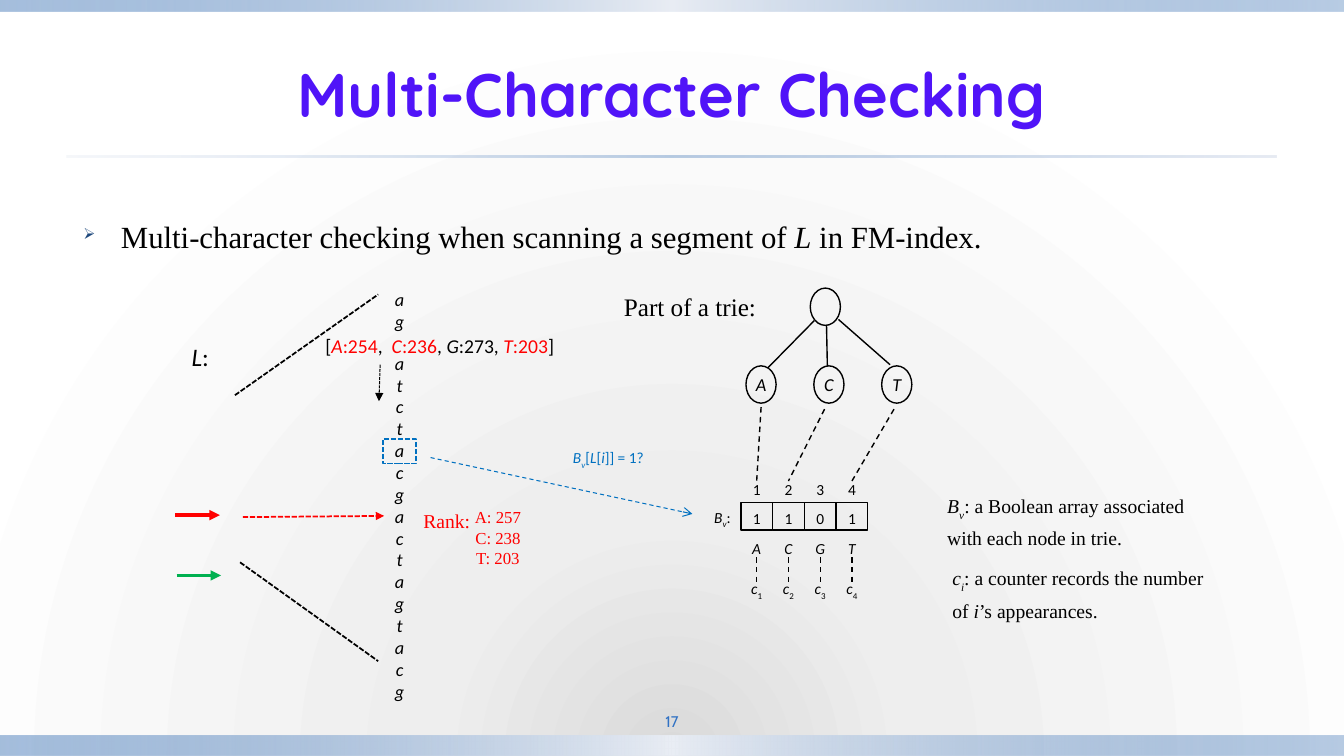
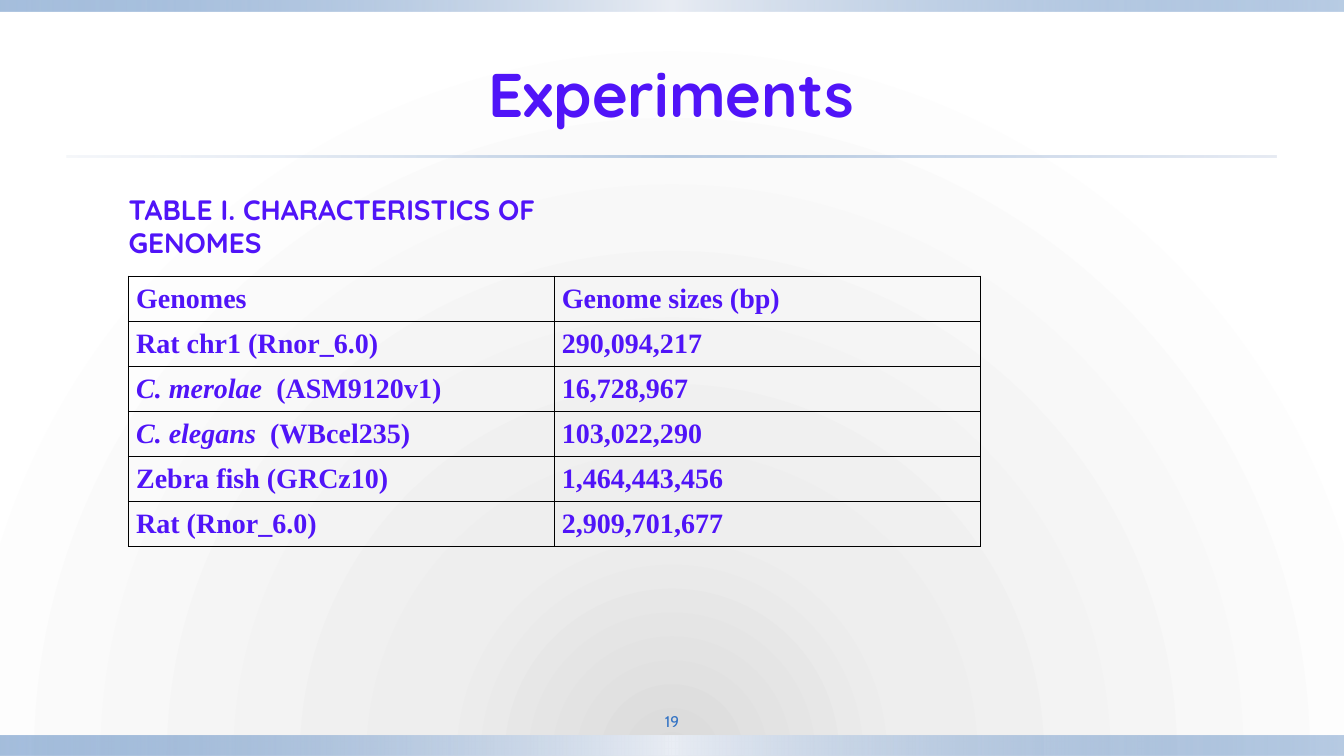
import dataclasses

import lxml.etree
import pptx
import pptx.dml.color
import pptx.enum.dml
import pptx.enum.shapes
import pptx.enum.text
import pptx.oxml.ns
import pptx.util

Cm = pptx.util.Cm
qn = pptx.oxml.ns.qn
ALIGN = pptx.enum.text.PP_ALIGN
ANCHOR = pptx.enum.text.MSO_ANCHOR
SHAPE = pptx.enum.shapes.MSO_SHAPE
DASH = pptx.enum.dml.MSO_LINE.DASH
SHORT_DASH = pptx.enum.dml.MSO_LINE.SQUARE_DOT


@dataclasses.dataclass(frozen=True)
class Theme:
    # Colours
    black: str = "000000"
    red: str = "FF0000"
    green: str = "00B050"
    blue: str = "0070C0"
    title: str = "5014F8"
    number: str = "3172C4"
    bullet: str = "1F497D"
    # Gradient stops: position, colour, opacity (all in percent)
    backdrop: tuple = ((0, "DADADA", 100), (31, "EEEEEE", 100), (100, "FFFFFF", 100))
    band: tuple = ((0, "4F81BD", 50), (50, "E9EDF4", 100), (100, "4F81BD", 40))
    rule: tuple = ((0, "D0D8E8", 20), (50, "4F81BD", 40), (100, "D0D8E8", 50))
    # Fonts
    display: str = "Quicksand"
    serif: str = "Times New Roman"
    sans: str = "Calibri"
    footer: str = "Cabin"
    # Type sizes
    title_size: int = 44
    body_size: int = 22
    table_size: int = 20
    label_size: int = 18
    note_size: int = 14
    letter_size: int = 13
    rank_size: int = 12
    small_size: int = 11


THEME = Theme()


@dataclasses.dataclass(frozen=True)
class Box:
    """A rectangle in centimetres."""
    left: float
    top: float
    width: float
    height: float

    def inner(self, left, top, width, height):
        return Box(self.left + left, self.top + top, width, height)

    def point(self, across, down):
        return self.left + across, self.top + down

    def lengths(self):
        return [Cm(value) for value in (self.left, self.top, self.width, self.height)]


SLIDE = Box(0, 0, 33.87, 19.05)
NORMAL_INSETS = (0.25, 0.13, 0.25, 0.13)
LABEL_INSETS = (0.15, 0, 0.15, 0)


def rgb(colour):
    return pptx.dml.color.RGBColor.from_string(colour)


# Text: a line is a string or a list of spans; a span is a string or
# (text, flags) with i = italic, s = subscript, r = red
def write(frame, lines, font=THEME.sans, size=THEME.small_size, colour=THEME.black,
          bold=False, italic=False, align=ALIGN.LEFT, spacing=1.0):
    for number, line in enumerate(lines):
        para = frame.add_paragraph() if number else frame.paragraphs[0]
        para.alignment = align
        para.line_spacing = spacing
        for piece in [line] if isinstance(line, str) else line:
            text, flags = (piece, "") if isinstance(piece, str) else piece
            span = para.add_run()
            span.text = text
            span.font.name = font
            span.font.size = pptx.util.Pt(size)
            span.font.bold = bold
            span.font.italic = italic or "i" in flags
            span.font.color.rgb = rgb(THEME.red if "r" in flags else colour)
            if "s" in flags:
                span.font._element.set("baseline", "-30000")


def set_frame(frame, insets, anchor, wrap=True):
    frame.word_wrap = wrap
    frame.vertical_anchor = anchor
    (frame.margin_left, frame.margin_top,
     frame.margin_right, frame.margin_bottom) = [Cm(inset) for inset in insets]


def add_text(page, box, lines, insets=NORMAL_INSETS, anchor=ANCHOR.TOP, wrap=True, **style):
    holder = page.shapes.add_textbox(*box.lengths())
    set_frame(holder.text_frame, insets, anchor, wrap)
    write(holder.text_frame, lines, **style)
    return holder


def add_label(page, box, line, **style):
    return add_text(page, box, [line], insets=LABEL_INSETS, anchor=ANCHOR.MIDDLE,
                    align=ALIGN.CENTER, **style)


# Shapes and lines
def add_outline(page, kind, box, text="", colour=THEME.black, width=1, dash=None,
                insets=(0, 0, 0, 0), **style):
    shape = page.shapes.add_shape(kind, *box.lengths())
    shape.shadow.inherit = False
    shape.fill.background()
    set_line(shape.line, colour, width, dash)
    if text:
        set_frame(shape.text_frame, insets, ANCHOR.MIDDLE)
        write(shape.text_frame, [text], align=ALIGN.CENTER, **style)
    return shape


def set_line(line, colour, width, dash):
    line.color.rgb = rgb(colour)
    line.width = pptx.util.Pt(width)
    if dash is not None:
        line.dash_style = dash


def add_line(page, start, end, colour=THEME.black, width=1, dash=None, head=None):
    link = page.shapes.add_connector(pptx.enum.shapes.MSO_CONNECTOR.STRAIGHT,
                                     *[Cm(value) for value in (*start, *end)])
    set_line(link.line, colour, width, dash)
    properties = link.element.spPr
    if head:
        lxml.etree.SubElement(properties.find(qn("a:ln")), qn("a:tailEnd"), type=head)
    lxml.etree.SubElement(properties, qn("a:effectLst"))
    return link


def set_gradient(owner, fill, stops, radial=False):
    fill.gradient()
    gradient = next(owner.element.iter(qn("a:gradFill")))
    gradient.clear()
    stop_list = lxml.etree.SubElement(gradient, qn("a:gsLst"))
    for position, colour, opacity in stops:
        stop = lxml.etree.SubElement(stop_list, qn("a:gs"), pos=str(position * 1000))
        tint = lxml.etree.SubElement(stop, qn("a:srgbClr"), val=colour)
        if opacity < 100:
            lxml.etree.SubElement(tint, qn("a:alpha"), val=str(opacity * 1000))
    if radial:
        circle = lxml.etree.SubElement(gradient, qn("a:path"), path="circle")
        lxml.etree.SubElement(circle, qn("a:fillToRect"), l="50000", t="150000", r="50000")
    else:
        lxml.etree.SubElement(gradient, qn("a:lin"), ang="0", scaled="0")


# Parts common to all pages
def add_page(deck, title, number):
    page = deck.slides.add_slide(deck.slide_layouts[6])
    for box, stops in ((SLIDE.inner(0, 18.54, SLIDE.width, 0.51), THEME.band),
                       (SLIDE.inner(0, 0, SLIDE.width, 0.3), THEME.band),
                       (SLIDE.inner(1.69, 3.91, 30.48, 0.06), THEME.rule)):
        band = page.shapes.add_shape(SHAPE.RECTANGLE, *box.lengths())
        band.shadow.inherit = False
        band.line.fill.background()
        set_gradient(band, band.fill, stops)
    add_text(page, SLIDE.inner(1.69, 0.76, 30.48, 3.18), [title], anchor=ANCHOR.MIDDLE,
             align=ALIGN.CENTER, font=THEME.display, size=THEME.title_size,
             colour=THEME.title, bold=True)
    add_text(page, SLIDE.inner(15.24, 17.78, 3.39, 0.79), [str(number)],
             insets=(0.13,) * 4, anchor=ANCHOR.MIDDLE, align=ALIGN.CENTER,
             font=THEME.footer, colour=THEME.number)
    return page


def add_bullet(page, box, line):
    holder = add_text(page, box, [line], font=THEME.serif, size=THEME.body_size,
                      align=ALIGN.JUSTIFY)
    para = holder.text_frame.paragraphs[0]
    para.space_before = pptx.util.Pt(4.4)
    properties = para._p.get_or_add_pPr()
    properties.set("marL", str(Cm(0.95)))
    properties.set("indent", str(Cm(-0.95)))
    tint = lxml.etree.SubElement(properties, qn("a:buClr"))
    lxml.etree.SubElement(tint, qn("a:srgbClr"), val=THEME.bullet)
    lxml.etree.SubElement(properties, qn("a:buSzPct"), val="50000")
    lxml.etree.SubElement(properties, qn("a:buChar"), char="➢")


# Segment of L with its counters and scan arrows
def add_segment(page, box):
    add_label(page, box.inner(0.25, 1.49, 0.79, 0.76), [("L", "i"), ":"],
              size=THEME.label_size, wrap=False)
    for top, height, letters in ((0.04, 1.37, "ag"), (1.64, 9.14, "atctacgactagtacg")):
        add_text(page, box.inner(5.3, top, 0.74, height), letters, wrap=False,
                 size=THEME.letter_size, italic=True, align=ALIGN.CENTER)
    add_text(page, box.inner(3.55, 1.18, 6.32, 0.86),
             [["[", ("A", "ir"), (":254", "r"), ",  ", ("C", "ir"), (":236", "r"), ", ",
               ("G", "i"), ":273, ", ("T", "ir"), (":203", "r"), "]"]],
             wrap=False, size=THEME.note_size)
    # Rank
    rank = dict(wrap=False, font=THEME.serif, colour=THEME.red, align=ALIGN.CENTER)
    add_text(page, box.inner(6.01, 5.6, 1.7, 0.86), ["Rank:"], size=THEME.note_size, **rank)
    add_text(page, box.inner(7.31, 5.55, 1.68, 1.8), ["A: 257", "C: 238", "T: 203"],
             size=THEME.rank_size, **rank)
    # Lines and arrows
    for start, end, colour, width, dash, head in (
            ((1.52, 2.86), (5.13, 0.32), THEME.black, 1.25, SHORT_DASH, None),
            ((1.65, 7.07), (5.13, 9.56), THEME.black, 1.25, SHORT_DASH, None),
            ((0.02, 5.88), (1.14, 5.88), THEME.red, 2.5, None, "triangle"),
            ((0.05, 7.4), (1.17, 7.4), THEME.green, 2.5, None, "triangle"),
            ((1.72, 5.93), (5.28, 5.9), THEME.red, 1.25, SHORT_DASH, "triangle"),
            ((5.18, 2.09), (5.15, 3.01), THEME.black, 0.75, SHORT_DASH, "triangle"),
            ((6.45, 4.43), (13.05, 5.85), THEME.blue, 0.75, DASH, "arrow")):
        add_line(page, box.point(*start), box.point(*end), colour, width, dash, head)
    # Current letter and its test
    add_outline(page, SHAPE.RECTANGLE, box.inner(5.25, 3.97, 0.84, 0.61),
                colour=THEME.blue, width=1.25, dash=SHORT_DASH)
    add_label(page, box.inner(9.65, 4.15, 2.57, 0.64),
              [("B", "i"), ("v", "is"), "[", ("L", "i"), "[", ("i", "i"), "]] = 1?"],
              colour=THEME.blue)


# Boolean array; returns its index labels
def add_boolean_array(page, box):
    pitch = 0.8
    add_text(page, box.inner(0, 0.57, 1.02, 0.81), [[("B", "i"), ("v", "is"), ":"]])
    indexes = []
    for column, (bit, letter) in enumerate(zip("1101", "ACGT")):
        left = 0.92 + column * pitch
        number = str(column + 1)
        add_outline(page, SHAPE.RECTANGLE, box.inner(left, 0.57, pitch, 0.69), bit,
                    insets=(0.25, 0.13, 0.25, 0.03))
        index, name, counter = [
            add_label(page, box.inner(left - 0.02, top, pitch + 0.04, 0.43), line)
            for top, line in ((0.02, number), (1.51, [(letter, "i")]),
                              (2.56, [("c", "i"), (number, "s")]))]
        link = add_line(page, box.point(left, 1.94), box.point(left, 2.56), dash=DASH)
        link.begin_connect(name, 2)
        link.end_connect(counter, 0)
        indexes.append(index)
    return indexes


# Trie with dashed links down to the array
def add_trie(page, box, indexes):
    add_label(page, box.inner(0.04, 0.29, 4.7, 0.48), "Part of a trie:",
              font=THEME.serif, size=THEME.label_size)
    add_outline(page, SHAPE.OVAL, box.inner(5.42, 0.06, 0.76, 0.94))
    branches = (((5.52, 0.88), (4.35, 2.07), (4.18, 3.06)),
                ((5.83, 1), (5.85, 2.02), (5.78, 3.11)),
                ((6.13, 0.85), (7.43, 1.99), (7.53, 3.11)))
    targets = (indexes[0], indexes[1], indexes[3])
    for order, (letter, branch, target) in enumerate(zip("ACT", branches, targets)):
        add_outline(page, SHAPE.OVAL, box.inner(3.8 + 1.71 * order, 2.02, 0.76, 0.94),
                    letter, size=THEME.letter_size, italic=True)
        start, end, drop = [box.point(*spot) for spot in branch]
        add_line(page, start, end)
        add_line(page, drop, drop, dash=DASH).end_connect(target, 0)


def add_notes(page, box):
    for left, top, line in (
            (0, 0, [("B", "i"), ("v", "is"),
                    ": a Boolean array associated with each node in trie."]),
            (0.13, 1.83, [("c", "i"), ("i", "is"), ": a counter records the number of ",
                          ("i", "i"), "’s appearances."])):
        add_text(page, box.inner(left, top, box.width - 2 * left, 1.45), [line],
                 font=THEME.serif, size=THEME.note_size, spacing=1.2)


# Table of genomes with its caption
def add_genome_table(page, box):
    style = dict(size=THEME.table_size, colour=THEME.title, bold=True)
    add_text(page, box.inner(-0.25, -1.83, 13.9, 1.12),
             ["TABLE I. CHARACTERISTICS OF GENOMES"], anchor=ANCHOR.MIDDLE,
             font=THEME.display, **style)
    rows = (("Genomes", "Genome sizes (bp)"),
            ("Rat chr1 (Rnor_6.0)", "290,094,217"),
            ([("C. merolae", "i"), "  (ASM9120v1)"], "16,728,967"),
            ([("C. elegans", "i"), "  (WBcel235)"], "103,022,290"),
            ("Zebra fish (GRCz10)", "1,464,443,456"),
            ("Rat (Rnor_6.0)", "2,909,701,677"))
    table = page.shapes.add_table(len(rows), 2, *box.lengths()).table
    table.first_row = table.horz_banding = False
    for row, lines in enumerate(rows):
        for column, line in enumerate(lines):
            cell = table.cell(row, column)
            cell.margin_left = cell.margin_right = Cm(0.19)
            cell.margin_top = cell.margin_bottom = 0
            cell.vertical_anchor = ANCHOR.MIDDLE
            write(cell.text_frame, [line], font=THEME.serif, **style)
            for side in ("a:lnL", "a:lnR", "a:lnT", "a:lnB"):
                border = lxml.etree.SubElement(cell._tc.get_or_add_tcPr(), qn(side),
                                               w=str(pptx.util.Pt(1)))
                paint = lxml.etree.SubElement(border, qn("a:solidFill"))
                lxml.etree.SubElement(paint, qn("a:srgbClr"), val=THEME.black)
            cell.fill.background()


def main():
    deck = pptx.Presentation()
    deck.slide_width, deck.slide_height = Cm(SLIDE.width), Cm(SLIDE.height)
    master = deck.slide_master
    set_gradient(master, master.background.fill, THEME.backdrop, radial=True)

    page = add_page(deck, "Multi-Character Checking", 17)
    add_bullet(page, Box(1.85, 5.36, 29.69, 1.4),
               ["Multi-character checking when scanning a segment of ", ("L", "i"),
                " in FM-index."])
    add_segment(page, Box(4.4, 7.1, 13.05, 10.8))
    indexes = add_boolean_array(page, Box(17.75, 12.1, 4.12, 3))
    add_trie(page, Box(15, 7.2, 8, 3.1), indexes)
    add_notes(page, Box(23.62, 12.17, 7.37, 3.28))

    page = add_page(deck, "Experiments", 19)
    add_genome_table(page, Box(3.24, 6.96, 21.46, 6.81))
    deck.save("out.pptx")


if __name__ == "__main__":
    main()
